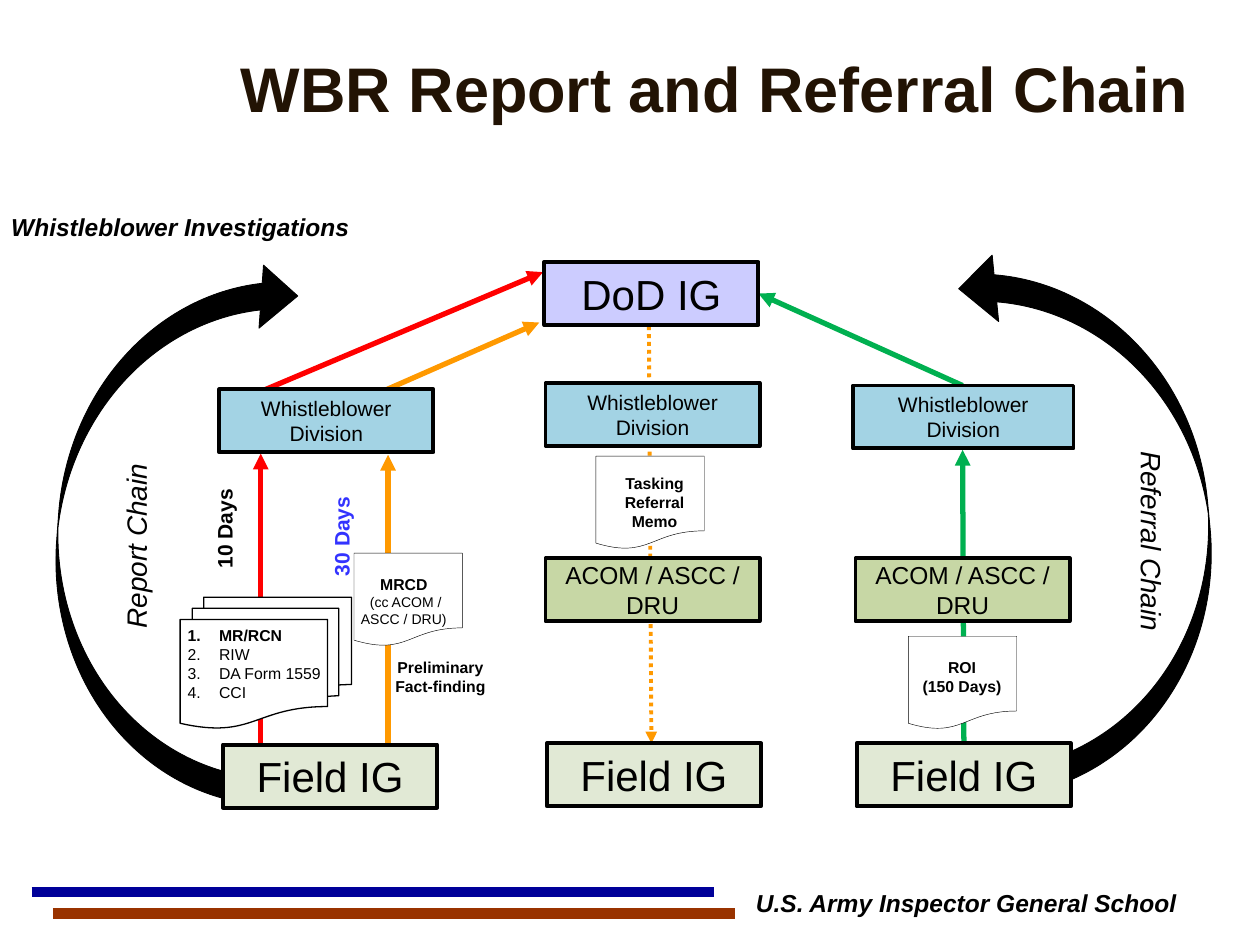
"""Build the report and referral chain slide."""
from dataclasses import dataclass

from lxml import etree
from pptx import Presentation
from pptx.dml import color
from pptx.enum import dml, shapes, text
from pptx.oxml import ns
from pptx.util import Inches, Pt

Kind = shapes.MSO_SHAPE
Align = text.PP_ALIGN
Anchor = text.MSO_ANCHOR


@dataclass(frozen=True)
class Theme:
    face: str = "Arial"
    black: str = "000000"
    white: str = "FFFFFF"
    title: str = "221304"
    navy: str = "000099"
    rust: str = "993300"
    red: str = "FF0000"
    amber: str = "FF9900"
    green: str = "00B050"
    violet: str = "3333FF"
    lilac: str = "CCCCFF"
    sky: str = "A3D3E4"
    olive: str = "C7D7A5"
    sage: str = "E1E9D5"
    head: float = 36
    big: float = 24
    chain: float = 16
    label: float = 14
    body: float = 12
    note: float = 9
    small: float = 8


T = Theme()


@dataclass(frozen=True)
class Para:
    text: str
    size: float = T.note
    bold: bool = False
    slant: bool = False
    tint: str = T.black
    align: Align = Align.CENTER
    listed: bool = False


@dataclass(frozen=True)
class Label:
    left: float
    top: float
    width: float
    height: float
    paras: tuple[Para, ...]
    turn: float = 0


@dataclass(frozen=True)
class Box:
    left: float
    top: float
    text: str
    fill: str
    size: float
    width: float = 1.7


@dataclass(frozen=True)
class Line:
    start: tuple[float, float]
    end: tuple[float, float]
    tint: str
    weight: float = 3
    dotted: bool = False
    arrow: bool = True


@dataclass(frozen=True)
class Curve:
    left: float
    top: float
    width: float
    height: float
    turn: float
    flips: tuple[str, ...]
    bends: tuple[float, ...]


def rgb(tint: str) -> color.RGBColor:
    return color.RGBColor.from_string(tint)


def write(frame, paras: tuple[Para, ...], anchor: Anchor = Anchor.TOP) -> None:
    frame.word_wrap = True
    frame.vertical_anchor = anchor
    for spot, item in enumerate(paras):
        para = frame.add_paragraph() if spot else frame.paragraphs[0]
        para.text = item.text
        para.alignment = item.align
        if item.listed:
            props = para._p.get_or_add_pPr()
            props.set("marL", str(Inches(0.25)))
            props.set("indent", str(-Inches(0.25)))
            mark = etree.SubElement(props, ns.qn("a:buAutoNum"))
            mark.set("type", "arabicPeriod")
        font = para.font
        font.name, font.size = T.face, Pt(item.size)
        font.bold, font.italic = item.bold, item.slant
        font.color.rgb = rgb(item.tint)


def draw_label(slide, item: Label) -> None:
    shape = slide.shapes.add_textbox(
        Inches(item.left), Inches(item.top), Inches(item.width), Inches(item.height))
    shape.rotation = item.turn
    write(shape.text_frame, item.paras)


def draw_shape(slide, kind: Kind, left: float, top: float, width: float,
               height: float, fill: str, weight: float):
    shape = slide.shapes.add_shape(
        kind, Inches(left), Inches(top), Inches(width), Inches(height))
    shape.shadow.inherit = False
    shape.fill.solid()
    shape.fill.fore_color.rgb = rgb(fill)
    shape.line.color.rgb = rgb(T.black)
    shape.line.width = Pt(weight)
    return shape


def draw_box(slide, item: Box) -> None:
    shape = draw_shape(slide, Kind.RECTANGLE, item.left, item.top,
                       item.width, 0.5, item.fill, 2.25)
    write(shape.text_frame, (Para(item.text, item.size),), Anchor.MIDDLE)


def draw_curve(slide, item: Curve) -> None:
    shape = draw_shape(slide, Kind.CURVED_RIGHT_ARROW, item.left, item.top,
                       item.width, item.height, T.black, 0.5)
    shape.rotation = item.turn
    for spot, bend in enumerate(item.bends):
        shape.adjustments[spot] = bend
    for flip in item.flips:
        shape._element.spPr.xfrm.set(flip, "1")


def draw_line(slide, item: Line) -> None:
    link = slide.shapes.add_connector(
        shapes.MSO_CONNECTOR.STRAIGHT, *map(Inches, item.start + item.end))
    link.line.color.rgb = rgb(item.tint)
    link.line.width = Pt(item.weight)
    if item.dotted:
        link.line.dash_style = dml.MSO_LINE.ROUND_DOT
    props = link._element.spPr
    if item.arrow:
        tail = etree.SubElement(props.find(ns.qn("a:ln")), ns.qn("a:tailEnd"))
        tail.set("type", "triangle")
    etree.SubElement(props, ns.qn("a:effectLst"))


LINES = (
    Line((0.25, 7.08), (5.67, 7.08), T.navy, 6, arrow=False),
    Line((0.42, 7.25), (5.83, 7.25), T.rust, 6, arrow=False),
    Line((3.05, 3.1), (4.28, 2.56), T.amber),
    Line((3.08, 5.9), (3.08, 3.61), T.amber),
    Line((7.64, 3.06), (6.02, 2.33), T.green),
    Line((2.04, 3.12), (4.31, 2.16), T.red),
    Line((5.15, 2.59), (5.17, 5.9), T.amber, 2.25, dotted=True),
    Line((7.65, 5.9), (7.64, 3.57), T.green),
    Line((2.07, 5.92), (2.07, 3.6), T.red),
)
CURVES = (
    Curve(0.46, 2.03, 1.77, 4.3, 4.1, ("flipV",), (0.12, 0.283, 0.163)),
    Curve(7.79, 1.93, 1.8, 4.31, 354.4, ("flipH", "flipV"), (0.12, 0.294, 0.161)),
)
DIVISION, COMMAND, FIELD = "Whistleblower Division", "ACOM / ASCC / DRU", "Field IG"
BOXES = (
    Box(4.32, 2.08, "DoD IG", T.lilac, T.big),
    Box(1.74, 3.09, DIVISION, T.sky, T.body),
    Box(4.33, 3.04, DIVISION, T.sky, T.body),
    Box(6.77, 3.06, DIVISION, T.sky, T.body, 1.75),
    Box(4.33, 4.43, COMMAND, T.olive, T.label),
    Box(6.79, 4.43, COMMAND, T.olive, T.label),
    Box(1.77, 5.91, FIELD, T.sage, T.big),
    Box(4.34, 5.9, FIELD, T.sage, T.big),
    Box(6.8, 5.9, FIELD, T.sage, T.big),
)
PAGES = ((2.81, 4.39), (4.73, 3.62), (7.21, 5.05))
FORMS = tuple(Para(name, bold=not spot, align=Align.LEFT, listed=True)
              for spot, name in enumerate(("MR/RCN", "RIW", "DA Form 1559", "CCI")))
LABELS = (
    Label(1.8, 0.34, 7.75, 1.25,
          (Para("WBR Report and Referral Chain", T.head, True, tint=T.title),)),
    Label(-0.01, 1.63, 4.3, 0.5,
          (Para("Whistleblower Investigations", T.label, True, True, align=Align.LEFT),)),
    Label(5.42, 7, 4.5, 0.5,
          (Para("U.S. Army Inspector General School", T.label, True, True),)),
    Label(1.39, 4.92, 1.42, 0.71, FORMS),
    Label(1.33, 4.01, 0.9, 0.3, (Para("10 Days", T.body, True, align=Align.LEFT),), 270),
    Label(2.26, 4.07, 0.9, 0.3,
          (Para("30 Days", T.body, True, tint=T.violet, align=Align.LEFT),), 270),
    Label(0.33, 3.97, 1.86, 0.73, (Para("Report Chain", T.chain, slant=True),), 270),
    Label(8.03, 3.93, 1.86, 0.73, (Para("Referral Chain", T.chain, slant=True),), 90),
    Label(2.73, 4.51, 0.95, 0.71,
          (Para("MRCD", bold=True), Para(" (cc ACOM / ASCC / DRU)", T.small))),
    Label(4.72, 3.71, 0.95, 0.74, (Para("Tasking Referral Memo", bold=True),)),
    Label(2.92, 5.17, 1.15, 0.4, (Para("Preliminary Fact-finding", bold=True),)),
    Label(7.16, 5.17, 0.95, 0.59,
          (Para("ROI", bold=True), Para("(150 Days)", bold=True))),
)


def main() -> None:
    deck = Presentation()
    deck.slide_width, deck.slide_height = Inches(10), Inches(7.5)
    slide = deck.slides.add_slide(deck.slide_layouts[6])
    for draw, items in ((draw_line, LINES), (draw_curve, CURVES), (draw_box, BOXES)):
        for item in items:
            draw(slide, item)
    draw_shape(slide, Kind.FLOWCHART_MULTIDOCUMENT, 1.43, 4.74, 1.36, 1.04, T.white, 0.75)
    for left, top in PAGES:
        draw_shape(slide, Kind.FLOWCHART_DOCUMENT, left, top, 0.86, 0.74, T.white, 0.25)
    for item in LABELS:
        draw_label(slide, item)
    deck.save("out.pptx")


if __name__ == "__main__":
    main()
